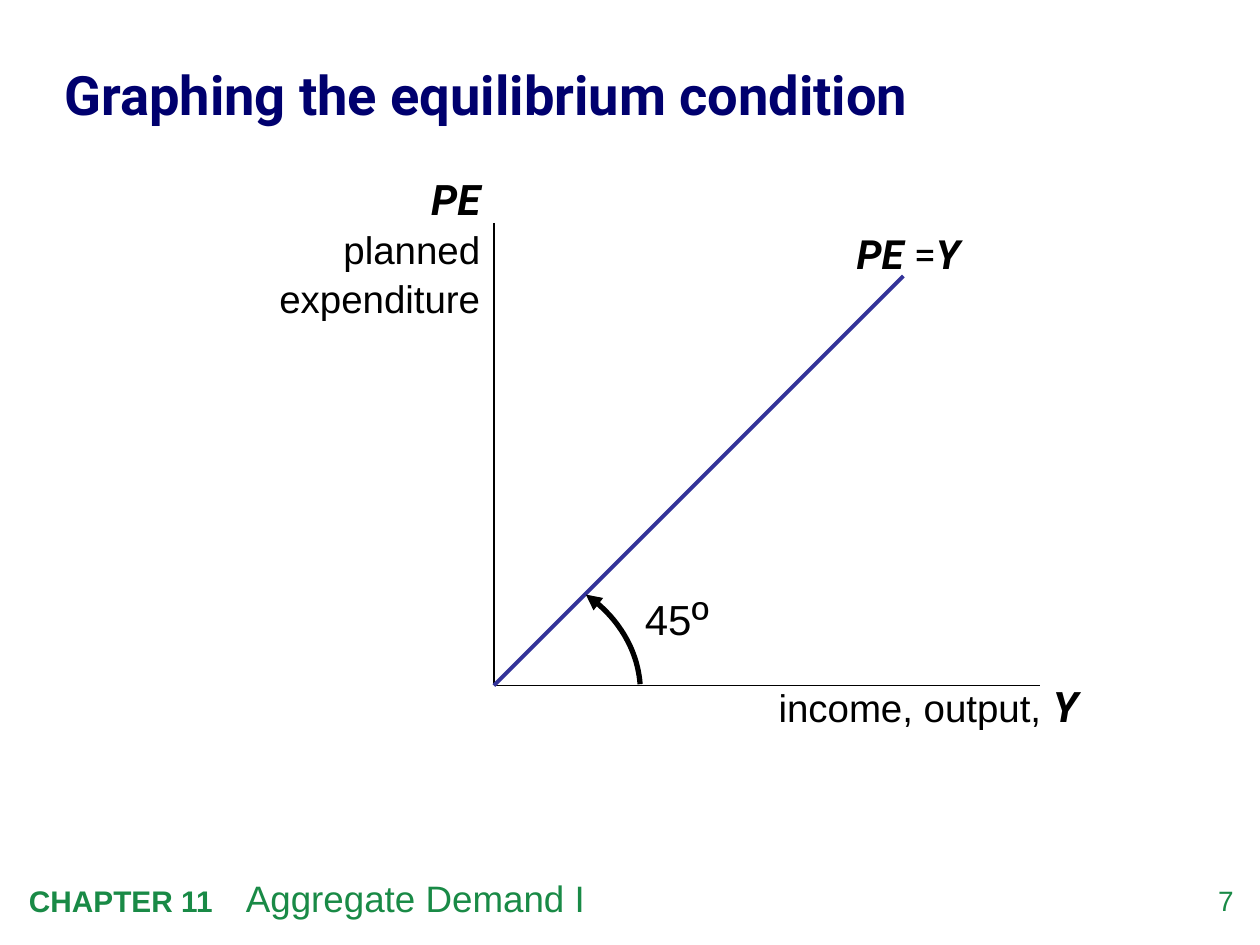
"""Build the slide that graphs the equilibrium condition PE = Y."""
from lxml import etree
from pptx import Presentation
from pptx.dml.color import RGBColor
from pptx.enum.shapes import MSO_CONNECTOR
from pptx.enum.text import MSO_ANCHOR, PP_ALIGN
from pptx.oxml.ns import qn
from pptx.util import Pt

STRAIGHT = MSO_CONNECTOR.STRAIGHT
LEFT, RIGHT = PP_ALIGN.LEFT, PP_ALIGN.RIGHT
TOP, MIDDLE = MSO_ANCHOR.TOP, MSO_ANCHOR.MIDDLE
BLACK = RGBColor(0x00, 0x00, 0x00)
NAVY = RGBColor(0x00, 0x00, 0x6E)
BLUE = RGBColor(0x33, 0x33, 0x99)
GREEN = RGBColor(0x19, 0x8A, 0x46)

deck = Presentation()
deck.slide_width, deck.slide_height = Pt(720), Pt(540)
page = deck.slides.add_slide(deck.slide_layouts[6])


def add_text(area, paragraphs, color=BLACK, align=LEFT, anchor=TOP, inset=True):
    """Add a text box; each span is (text, size, font, bold, italic)."""
    box = page.shapes.add_textbox(*map(Pt, area))
    frame = box.text_frame
    frame.word_wrap = True
    frame.vertical_anchor = anchor
    if not inset:
        frame.margin_left = frame.margin_right = 0
        frame.margin_top = frame.margin_bottom = 0
    for index, spans in enumerate(paragraphs):
        para = frame.add_paragraph() if index else frame.paragraphs[0]
        para.alignment = align
        for text, size, font, bold, italic in spans:
            span = para.add_run()
            span.text = text
            span.font.size = Pt(size)
            span.font.name = font
            span.font.bold = bold
            span.font.italic = italic
            span.font.color.rgb = color
    return frame


def add_line(start, end, color, width):
    """Add a straight line without a shadow."""
    line = page.shapes.add_connector(STRAIGHT, *map(Pt, start + end))
    line.line.color.rgb = color
    line.line.width = Pt(width)
    etree.SubElement(line._element.spPr, qn("a:effectLst"))


add_text((665.3, 504.7, 39.6, 23), [[("7", 16, "Arial", False, False)]],
         GREEN, RIGHT, inset=False)

footer = add_text((9.4, 496.8, 589, 32.4), [[
    ("CHAPTER 11\t", 17, "Arial", True, False),
    ("Aggregate Demand I", 21, "Arial", False, False),
]], GREEN)
tab_stops = etree.SubElement(footer.paragraphs[0]._p.get_or_add_pPr(), qn("a:tabLst"))
etree.SubElement(tab_stops, qn("a:tab"), pos=str(Pt(124)), algn="l")

title = add_text((36.7, 18.7, 649.4, 74.2), [[
    ("Graphing the equilibrium condition", 31, "Roboto", True, False),
]], NAVY, anchor=MIDDLE, inset=False)
title.paragraphs[0].line_spacing = 0.9

origin = (282.2, 391.7)
add_line((origin[0], 127.4), origin, BLACK, 1)
add_line(origin, (594, origin[1]), BLACK, 1)

add_text((437.8, 385.2, 203.8, 36), [[
    ("income, output,", 22, "Arial", False, False),
    (" ", 24, "Arial", False, False),
    ("Y", 24, "Roboto", True, True),
]])

axis_label = add_text((118.8, 95.8, 162.7, 92.2), [
    [("PE", 24, "Roboto", True, True)],
    [("planned", 22, "Arial", False, False)],
    [("expenditure", 22, "Arial", False, False)],
], align=RIGHT)
for para in axis_label.paragraphs:
    para.space_before = Pt(1.2)

reach = 234
add_line(origin, (origin[0] + reach, origin[1] - reach), BLUE, 2.25)
add_text((482.4, 127.4, 88.6, 35.3), [[
    ("PE", 23, "Roboto", True, True),
    (" =", 23, "Roboto", False, False),
    ("Y", 23, "Roboto", True, True),
]])

controls = [(334.8, 339.8), (352.8, 352.1), (364.3, 370.8), (365.8, 391)]
steps = 24
curve = []
for step in range(steps + 1):
    t = step / steps
    weights = ((1 - t) ** 3, 3 * t * (1 - t) ** 2, 3 * t ** 2 * (1 - t), t ** 3)
    curve.append(tuple(Pt(sum(w * point[axis] for w, point in zip(weights, controls)))
                       for axis in (0, 1)))
builder = page.shapes.build_freeform(*curve[0])
builder.add_line_segments(curve[1:], close=False)
angle_arc = builder.convert_to_shape()
angle_arc.shadow.inherit = False
angle_arc.fill.background()
angle_arc.line.color.rgb = BLACK
angle_arc.line.width = Pt(3)
etree.SubElement(angle_arc.line._get_or_add_ln(), qn("a:headEnd"), type="triangle")

add_text((361.4, 332.6, 54, 39.6), [[
    ("45", 24, "Arial", False, False),
    ("º", 27, "Arial", False, False),
]])

deck.save("out.pptx")
